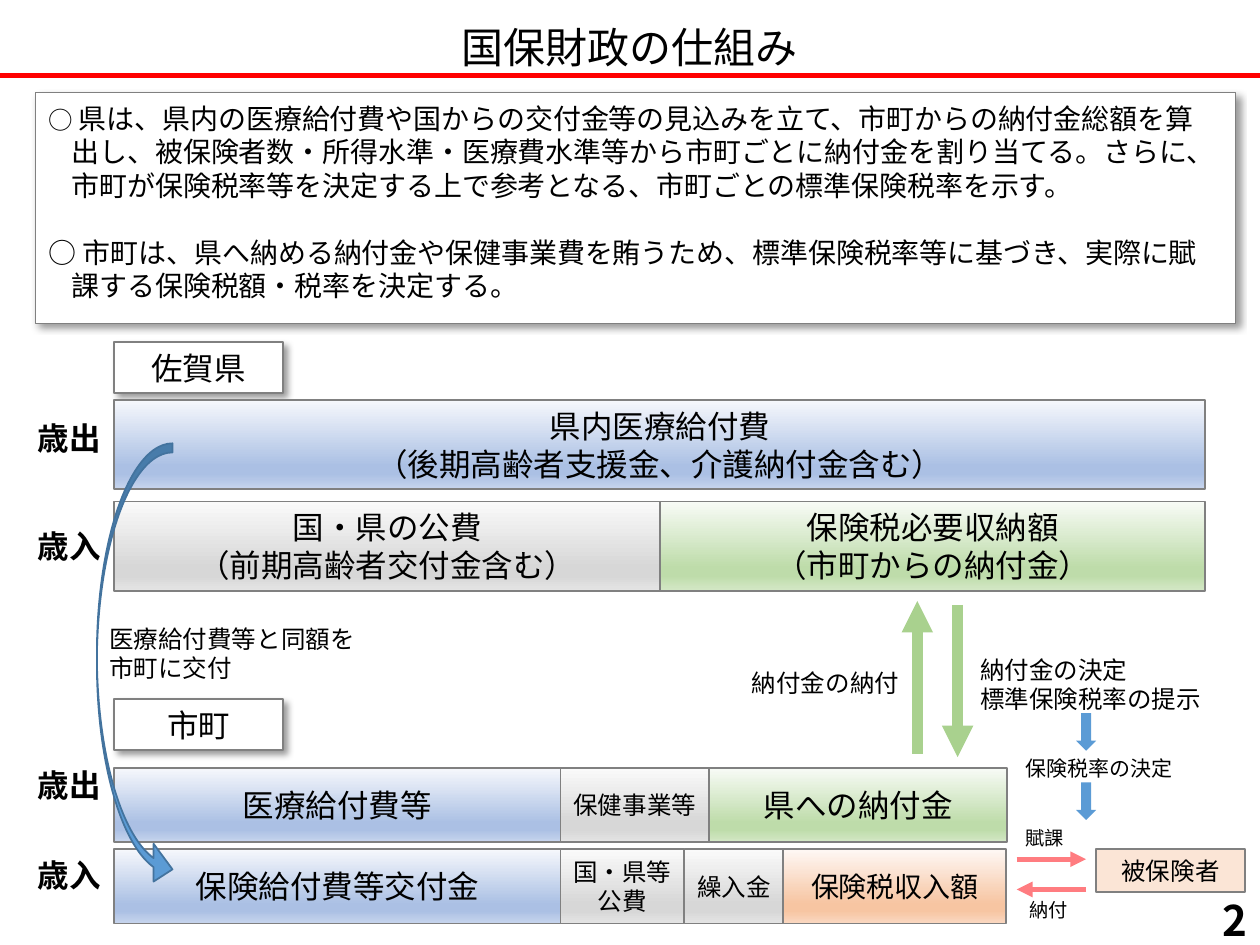
from dataclasses import dataclass

from lxml import etree
from pptx import Presentation
from pptx.dml.color import RGBColor
from pptx.enum import shapes as sh, text as tx
from pptx.oxml.ns import qn
from pptx.util import Pt

LEFT, MID, RIGHT = tx.PP_ALIGN.LEFT, tx.PP_ALIGN.CENTER, tx.PP_ALIGN.RIGHT
RECT, DOWN = sh.MSO_SHAPE.RECTANGLE, sh.MSO_SHAPE.DOWN_ARROW


@dataclass(frozen=True)
class Theme:
    font: str = "Noto Sans CJK JP"
    pitch: float = 1.2
    # Colours; each gradient has a top, a main and a bottom tone
    ink: str = "000000"
    paper: str = "FFFFFF"
    edge: str = "808080"
    red: str = "FF0000"
    rose: str = "FF7C80"
    leaf: str = "A9D18E"
    sky: str = "5B9BD5"
    rim: str = "43739E"
    peach: str = "FBE5D6"
    blue: tuple = ("F6F8FC", "ABC0E4", "C7D5ED")
    gray: tuple = ("FAFAFA", "D7D7D7", "E4E4E4")
    green: tuple = ("F8FBF6", "BEDCAA", "D4E8C6")
    warm: tuple = ("FEF8F5", "F7C5A2", "FAD8C1")
    # Type sizes
    head: int = 24
    big: int = 18
    body: int = 16
    note: int = 14
    small: int = 12
    tiny: int = 11


class Board:
    def __init__(self, slide, theme):
        self.slide, self.theme = slide, theme

    def style(self, para, size, align=LEFT, bold=False):
        font = para.font
        font.size, font.bold, font.name = Pt(size), bold, self.theme.font
        font.color.rgb = RGBColor.from_string(self.theme.ink)
        props = para._p.get_or_add_pPr().find(qn("a:defRPr"))
        etree.SubElement(props, qn("a:ea"), typeface=self.theme.font)
        para.alignment = align
        para.line_spacing = Pt(size * self.theme.pitch)

    def letter(self, frame, words, size, align=LEFT, bold=False,
               anchor=tx.MSO_ANCHOR.TOP):
        frame.word_wrap, frame.vertical_anchor = True, anchor
        frame.text = words
        for para in frame.paragraphs:
            self.style(para, size, align, bold)

    def title(self, words, x, y, w, h):
        head = self.slide.shapes.title
        head.left, head.top, head.width, head.height = map(Pt, (x, y, w, h))
        self.letter(head.text_frame, words, self.theme.head, MID,
                    anchor=tx.MSO_ANCHOR.MIDDLE)

    def label(self, words, x, y, w, h, size, **look):
        box = self.slide.shapes.add_textbox(Pt(x), Pt(y), Pt(w), Pt(h))
        self.letter(box.text_frame, words, size, **look)

    def shape(self, kind, x, y, w, h, fill, line=None, width=1):
        item = self.slide.shapes.add_shape(kind, Pt(x), Pt(y), Pt(w), Pt(h))
        item.shadow.inherit = False
        if isinstance(fill, tuple):
            self.shade(item, fill)
        else:
            item.fill.solid()
            item.fill.fore_color.rgb = RGBColor.from_string(fill)
        if line:
            item.line.color.rgb = RGBColor.from_string(line)
            item.line.width = Pt(width)
        else:
            item.line.fill.background()
        return item

    def shade(self, item, tones):
        item.fill.gradient()
        item.fill.gradient_angle = 270
        stops = item._element.spPr.find(".//" + qn("a:gsLst"))
        for old in list(stops):
            stops.remove(old)
        top, main, end = tones
        for pos, tone in ((0, top), (74, main), (83, main), (100, end)):
            stop = etree.SubElement(stops, qn("a:gs"), pos=str(pos * 1000))
            etree.SubElement(stop, qn("a:srgbClr"), val=tone)

    def drop(self, item):
        fx = item._element.spPr.find(qn("a:effectLst"))
        cast = etree.SubElement(fx, qn("a:outerShdw"), blurRad=str(Pt(4)),
                                dist=str(Pt(3)), dir="2700000",
                                algn="tl", rotWithShape="0")
        tone = etree.SubElement(cast, qn("a:srgbClr"), val=self.theme.ink)
        etree.SubElement(tone, qn("a:alpha"), val="40000")

    def box(self, words, x, y, w, h, fill, size):
        item = self.shape(RECT, x, y, w, h, fill, self.theme.edge)
        frame = item.text_frame
        frame.margin_left = frame.margin_right = Pt(3)
        self.letter(frame, words, size, MID, anchor=tx.MSO_ANCHOR.MIDDLE)
        return item

    def bars(self, x, y, h, cells):
        for words, w, fill, size in cells:
            self.box(words, x, y, w, h, fill, size)
            x += w

    def panel(self, x, y, w, h, paras):
        size = self.theme.body
        item = self.shape(RECT, x, y, w, h, self.theme.paper,
                          self.theme.edge, 0.5)
        self.drop(item)
        frame = item.text_frame
        self.letter(frame, "\n" * (len(paras) - 1), size)
        frame.margin_left = frame.margin_right = Pt(7.9)
        frame.margin_top = Pt(5)
        for i, (para, runs) in enumerate(zip(frame.paragraphs, paras)):
            props = para._p.get_or_add_pPr()
            props.set("marL", str(Pt(13)))
            props.set("indent", str(Pt(-13)))
            if i:
                para.space_before = Pt(size * self.theme.pitch)
            for words, own in runs:
                run = para.add_run()
                run.text = words
                if own:
                    run.font.size = Pt(own)

    def line(self, x1, y1, x2, y2, color, width, arrow=True):
        link = self.slide.shapes.add_connector(
            sh.MSO_CONNECTOR.STRAIGHT, Pt(x1), Pt(y1), Pt(x2), Pt(y2))
        link.line.color.rgb = RGBColor.from_string(color)
        link.line.width = Pt(width)
        props = link._element.spPr
        if arrow:
            etree.SubElement(props.find(qn("a:ln")), qn("a:tailEnd"),
                             type="triangle")
        etree.SubElement(props, qn("a:effectLst"))


def main():
    deck = Presentation()
    deck.slide_width, deck.slide_height = Pt(720), Pt(540)
    t = Theme()
    b = Board(deck.slides.add_slide(deck.slide_layouts[5]), t)

    # Heading and summary
    b.title("国保財政の仕組み", 0, 8, 720, 37.5)
    b.line(0, 43, 720, 43, t.red, 3, arrow=False)
    b.panel(20, 52.8, 686, 131.8, [
        [("○ ", t.note),
         ("県は、県内の医療給付費や国からの交付金等の見込みを立て、市町からの納付金総額を算出し、"
          "被保険者数・所得水準・医療費水準等から市町ごとに納付金を割り当てる。さらに、"
          "市町が保険税率等を決定する上で参考となる、市町ごとの標準保険税率を示す。", None)],
        [("○ 市町は、県へ納める納付金や保健事業費を賄うため、標準保険税率等に基づき、"
          "実際に賦課する保険税額・税率を決定する。", None)]])

    # Budget bars of the prefecture and the towns
    x, full, unit = 65.3, 623.5, 85
    for words, y in (("佐賀県", 195.6), ("市町", 399.6)):
        b.drop(b.box(words, x, y, 96.5, 29, t.paper, t.big))
    b.bars(x, 228.6, 51, [
        ("県内医療給付費\n（後期高齢者支援金、介護納付金含む）", full, t.blue, t.big)])
    b.bars(x, 286.6, 51, [
        ("国・県の公費\n（前期高齢者交付金含む）", full / 2, t.gray, t.big),
        ("保険税必要収納額\n（市町からの納付金）", full / 2, t.green, t.big)])
    b.bars(x, 438.8, 42.5, [
        ("医療給付費等", 3 * unit, t.blue, t.big),
        ("保健事業等", unit, t.gray, t.note),
        ("県への納付金", 2 * unit, t.green, t.big)])
    b.bars(x, 485.2, 42.5, [
        ("保険給付費等交付金", 3 * unit, t.blue, t.big),
        ("国・県等\n公費", 70.8, t.gray, t.note),
        ("繰入金", 56.5, t.gray, t.note),
        ("保険税収入額", 1.5 * unit, t.warm, t.body)])
    for words, y in (("歳出", 236), ("歳入", 297.5),
                     ("歳出", 434), ("歳入", 485.5)):
        b.label(words, 14.5, y, 63, 29, t.big, bold=True)

    # Grant from the prefecture to the towns
    curve = b.shape(sh.MSO_SHAPE.CURVED_RIGHT_ARROW, 55.4, 253.4, 43.2, 254.2,
                    t.sky, t.rim)
    for i, value in enumerate((0.12, 0.5, 0.25)):
        curve.adjustments[i] = value
    b.label("医療給付費等と同額を\n市町に交付", 55.4, 353, 199.5, 41, t.note)

    # Payments and decisions between the levels
    b.line(547.2, 345.6, 547.2, 432.7, t.leaf, 6)
    b.line(524.2, 430.6, 524.2, 343.4, t.leaf, 6)
    b.label("納付金の納付", 422.6, 378, 142, 24.5, t.note)
    b.label("納付金の決定\n標準保険税率の提示", 553, 370.8, 153.4, 41, t.note)
    b.label("保険税率の決定", 573, 428.4, 110, 21.6, t.small, align=MID,
            anchor=tx.MSO_ANCHOR.MIDDLE)
    for y in (407.5, 447.1):
        b.shape(DOWN, 614.9, y, 11.5, 21.5, t.sky)

    # Insured persons
    b.box("被保険者", 626.4, 485.3, 85, 24.5, t.peach, t.note)
    b.line(581, 491, 620.6, 491, t.rose, 3)
    b.line(620.6, 508.3, 581, 508.3, t.rose, 3)
    b.label("賦課", 578.9, 468.7, 42.5, 21, t.tiny)
    b.label("納付", 581, 509.8, 42.5, 21, t.tiny)

    # Page number
    b.label("2", 558, 511.2, 162, 28.8, t.head, align=RIGHT, bold=True,
            anchor=tx.MSO_ANCHOR.MIDDLE)
    deck.save("out.pptx")


if __name__ == "__main__":
    main()
